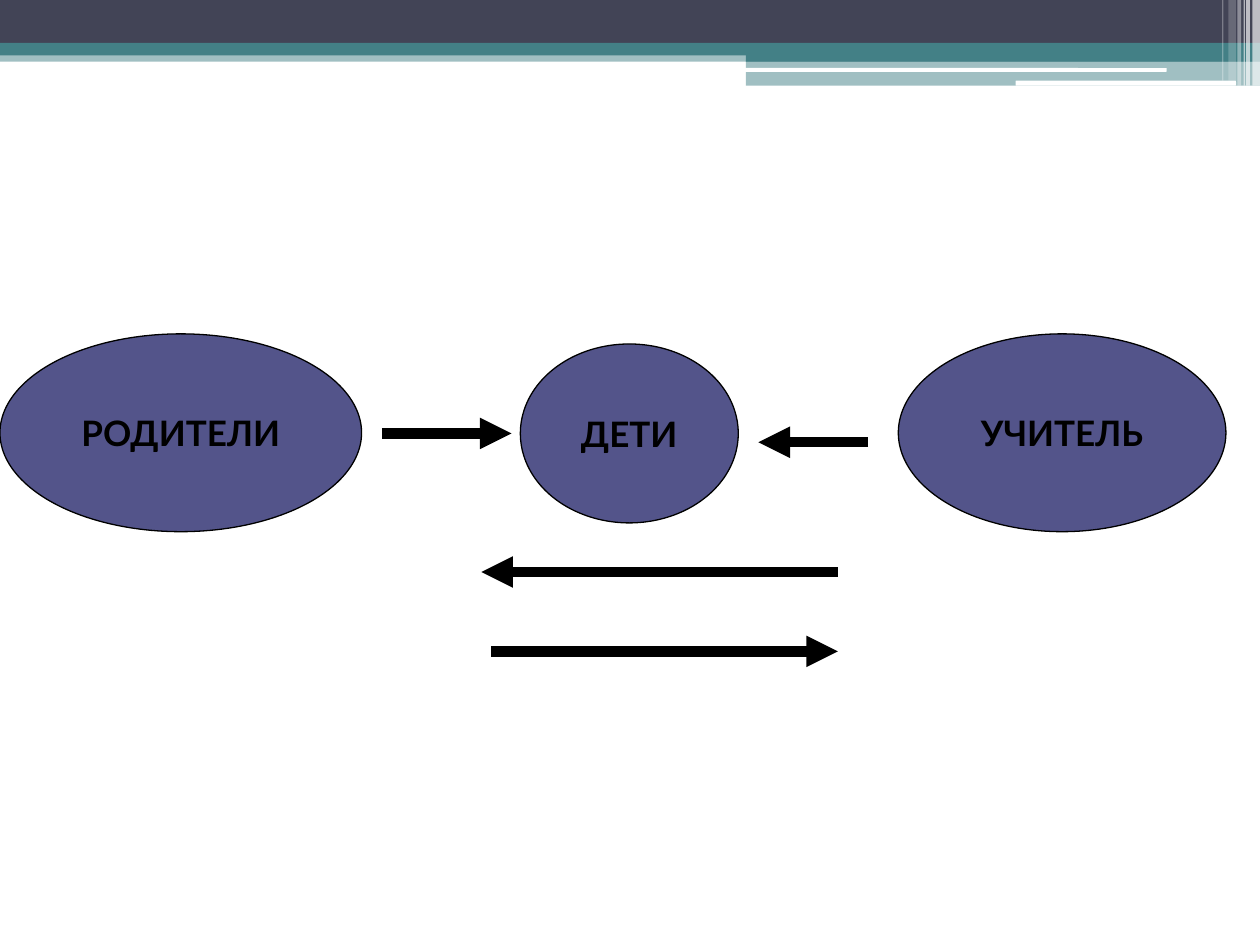
"""Build a slide showing how parents, children and teacher interact."""
from dataclasses import dataclass
from typing import Optional

from lxml import etree
from pptx import Presentation
from pptx.dml.color import RGBColor
from pptx.enum.shapes import MSO_CONNECTOR, MSO_SHAPE
from pptx.enum.text import MSO_ANCHOR, PP_ALIGN
from pptx.oxml.ns import qn
from pptx.util import Inches, Pt

RECTANGLE = MSO_SHAPE.RECTANGLE
ROUNDED = MSO_SHAPE.ROUNDED_RECTANGLE
OVAL = MSO_SHAPE.OVAL
STRAIGHT = MSO_CONNECTOR.STRAIGHT
MIDDLE = MSO_ANCHOR.MIDDLE
CENTER = PP_ALIGN.CENTER

COLUMNS, ROWS = 100, 75
SLIDE_WIDTH, SLIDE_HEIGHT = Inches(10), Inches(7.5)


@dataclass(frozen=True)
class Theme:
    """Colours, font, type size and line widths."""
    ink: str = "000000"
    paper: str = "FFFFFF"
    slate: str = "424456"
    teal: str = "438086"
    violet: str = "53548A"
    font: str = "Lato"
    label_size: float = 20
    outline: float = 0.75
    arrow: float = 6


@dataclass(frozen=True)
class Band:
    """A header strip placed in grid columns and rows."""
    column: float
    row: float
    width: float
    height: float
    color: str
    opacity: int = 100
    rounded: bool = False


@dataclass(frozen=True)
class Participant:
    """A labelled oval placed in grid columns and rows."""
    label: str
    column: float
    row: float
    width: float
    height: float


@dataclass(frozen=True)
class Influence:
    """A horizontal arrow from one column to another."""
    start: float
    end: float
    row: float


THEME = Theme()
WHITE_STRIPES = [
    (99.4, 0.6, 6.8, 65), (98.9, 0.3, 6.8, 65), (98.7, 0.1, 6.8, 60),
    (98.2, 0.3, 6.8, 40), (97.5, 0.6, 6.4, 20), (97, 0.1, 6.4, 30),
]
HEADER = [
    Band(0, 4, COLUMNS, 0.9, THEME.teal, 50),
    Band(0, 0, COLUMNS, 3.4, THEME.slate),
    Band(0, 3.4, COLUMNS, 1, THEME.teal),
    Band(59.2, 3.9, 40.8, 1, THEME.teal),
    Band(59.2, 4.8, 40.8, 2, THEME.teal, 50),
    Band(59.1, 5.4, 33.5, 0.3, THEME.paper, rounded=True),
    Band(80.6, 6.4, 17.5, 0.4, THEME.paper, rounded=True),
    *(Band(column, 0, width, height, THEME.paper, opacity)
      for column, width, height, opacity in WHITE_STRIPES),
]
PARTICIPANTS = [
    Participant("РОДИТЕЛИ", 0, 26.5, 28.7, 15.7),
    Participant("УЧИТЕЛЬ", 71.3, 26.5, 26, 15.7),
    Participant("ДЕТИ", 41.3, 27.3, 17.3, 14.2),
]
INFLUENCES = [
    Influence(30.3, 40.6, 34.4),
    Influence(68.9, 60.2, 35.1),
    Influence(66.5, 38.2, 45.4),
    Influence(39, 66.5, 51.7),
]


def across(columns: float) -> int:
    """Convert grid columns to a length."""
    return round(SLIDE_WIDTH * columns / COLUMNS)


def down(rows: float) -> int:
    """Convert grid rows to a length."""
    return round(SLIDE_HEIGHT * rows / ROWS)


def add_filled(slide, kind, area, color: str, opacity: int = 100, outline: Optional[str] = None):
    """Add a flat shape over a Band or Participant area."""
    shape = slide.shapes.add_shape(kind, across(area.column), down(area.row),
                                   across(area.width), down(area.height))
    shape.shadow.inherit = False
    shape.fill.solid()
    shape.fill.fore_color.rgb = RGBColor.from_string(color)
    if opacity < 100:
        tint = shape.fill._xPr.find(".//" + qn("a:srgbClr"))
        etree.SubElement(tint, qn("a:alpha"), val=str(opacity * 1000))
    if outline:
        shape.line.color.rgb = RGBColor.from_string(outline)
        shape.line.width = Pt(THEME.outline)
    else:
        shape.line.fill.background()
    return shape


def write_text(shape, text: str, *, size: float, color: str, font: str, bold: bool = False) -> None:
    """Write centred, unwrapped text into a shape."""
    frame = shape.text_frame
    frame.word_wrap = False
    frame.vertical_anchor = MIDDLE
    paragraph = frame.paragraphs[0]
    paragraph.alignment = CENTER
    run = paragraph.add_run()
    run.text = text
    run.font.size = Pt(size)
    run.font.name = font
    run.font.bold = bold
    run.font.color.rgb = RGBColor.from_string(color)


def add_band(slide, band: Band) -> None:
    """Draw one header strip."""
    kind = ROUNDED if band.rounded else RECTANGLE
    add_filled(slide, kind, band, band.color, band.opacity)


def add_participant(slide, person: Participant) -> None:
    """Draw one labelled oval."""
    oval = add_filled(slide, OVAL, person, THEME.violet, outline=THEME.ink)
    write_text(oval, person.label, size=THEME.label_size, color=THEME.ink,
               font=THEME.font, bold=True)


def add_influence(slide, influence: Influence) -> None:
    """Draw one arrow with its head at the end column."""
    height = down(influence.row)
    arrow = slide.shapes.add_connector(STRAIGHT, across(influence.start), height,
                                       across(influence.end), height)
    arrow.line.color.rgb = RGBColor.from_string(THEME.ink)
    arrow.line.width = Pt(THEME.arrow)
    etree.SubElement(arrow.line._get_or_add_ln(), qn("a:tailEnd"), type="triangle")
    etree.SubElement(arrow._element.spPr, qn("a:effectLst"))


def main() -> None:
    """Assemble and save the slide."""
    deck = Presentation()
    deck.slide_width, deck.slide_height = SLIDE_WIDTH, SLIDE_HEIGHT
    slide = deck.slides.add_slide(deck.slide_layouts[6])
    for band in HEADER:
        add_band(slide, band)
    for person in PARTICIPANTS:
        add_participant(slide, person)
    for influence in INFLUENCES:
        add_influence(slide, influence)
    deck.save("out.pptx")


if __name__ == "__main__":
    main()
